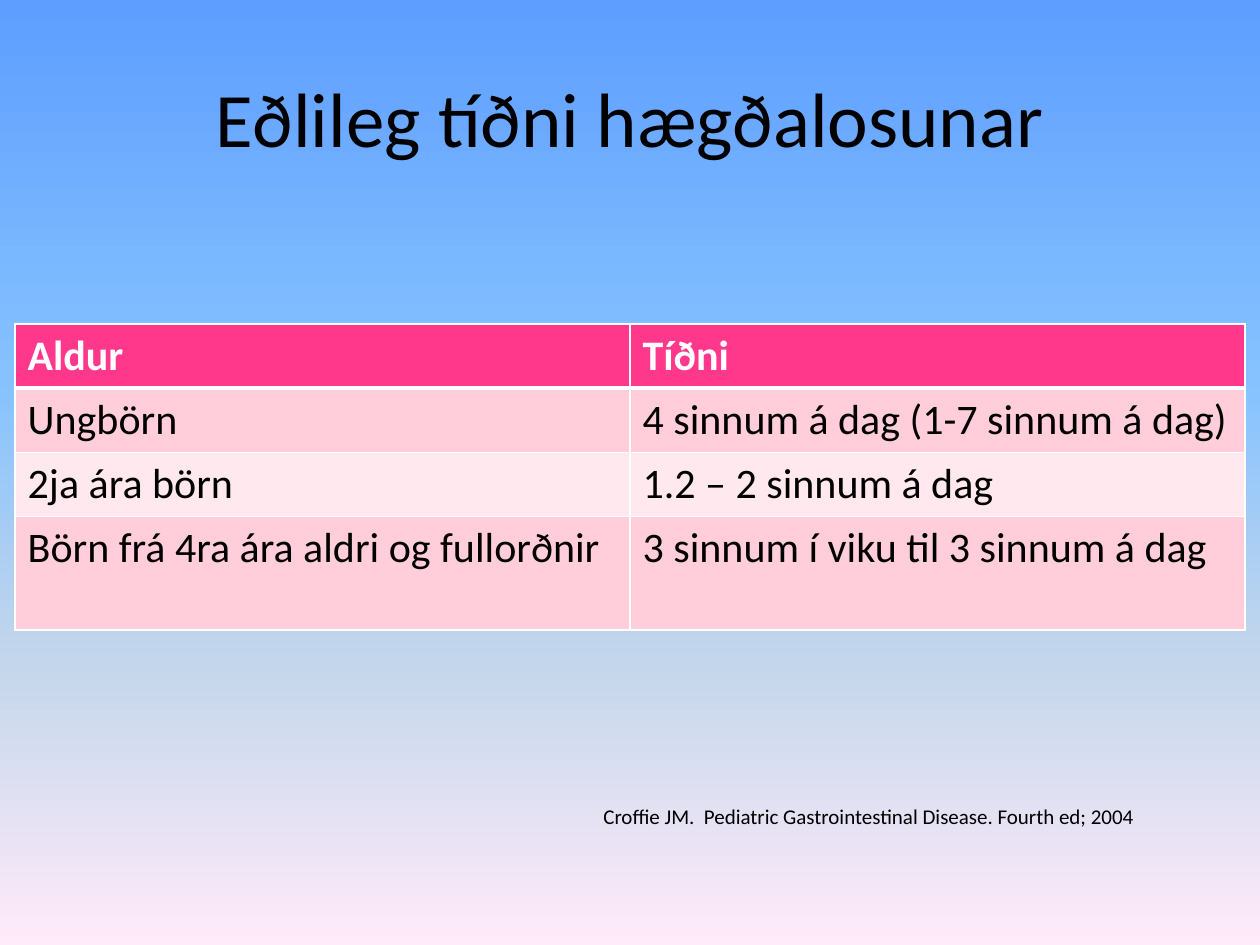
from lxml import etree
from pptx import Presentation
from pptx.dml.color import RGBColor
from pptx.enum.text import MSO_ANCHOR, MSO_AUTO_SIZE, PP_ALIGN
from pptx.oxml.ns import qn
from pptx.util import Inches, Pt

CENTER = PP_ALIGN.CENTER
MIDDLE = MSO_ANCHOR.MIDDLE
GROW = MSO_AUTO_SIZE.SHAPE_TO_FIT_TEXT

BLACK = RGBColor(0x00, 0x00, 0x00)
WHITE = RGBColor(0xFF, 0xFF, 0xFF)
PINK = RGBColor(0xFF, 0x38, 0x8C)
PINK_BAND = RGBColor(0xFF, 0xCE, 0xDA)
PALE_BAND = RGBColor(0xFF, 0xE8, 0xEE)
SKY_STOPS = [
    (0, RGBColor(0x5E, 0x9E, 0xFF)),
    (40, RGBColor(0x85, 0xC2, 0xFF)),
    (70, RGBColor(0xC4, 0xD6, 0xEB)),
    (100, RGBColor(0xFF, 0xEB, 0xFA)),
]


def set_font(paragraph, size, color, bold=False):
    paragraph.font.name = "Calibri"
    paragraph.font.size = Pt(size)
    paragraph.font.bold = bold
    paragraph.font.color.rgb = color


def add_solid(parent, color):
    solid = etree.SubElement(parent, qn("a:solidFill"))
    etree.SubElement(solid, qn("a:srgbClr"), val=str(color))


prs = Presentation()
prs.slide_width = Inches(10)
prs.slide_height = Inches(7.5)
slide = prs.slides.add_slide(prs.slide_layouts[6])

# Background gradient, top to bottom
sky = slide.background.fill
sky.gradient()
sky.gradient_angle = 270
stop_list = slide.element.find(".//" + qn("a:gsLst"))
for old_stop in list(stop_list):
    stop_list.remove(old_stop)
for percent, color in SKY_STOPS:
    stop = etree.SubElement(stop_list, qn("a:gs"), pos=str(percent * 1000))
    etree.SubElement(stop, qn("a:srgbClr"), val=str(color))

# Title
title = slide.shapes.add_textbox(Inches(0.5), Inches(0.3), Inches(9), Inches(1.25)).text_frame
title.word_wrap = True
title.vertical_anchor = MIDDLE
title.text = "Eðlileg tíðni hægðalosunar"
title.paragraphs[0].alignment = CENTER
set_font(title.paragraphs[0], 44, BLACK)

# Frequency by age
frequencies = [
    ("Aldur", "Tíðni"),
    ("Ungbörn", "4 sinnum á dag (1-7 sinnum á dag)"),
    ("2ja ára börn", "1.2 – 2 sinnum á dag"),
    ("Börn frá 4ra ára aldri og fullorðnir", "3 sinnum í viku til 3 sinnum á dag"),
]
row_heights = [0.51, 0.51, 0.51, 0.9]
row_fills = [PINK, PINK_BAND, PALE_BAND, PINK_BAND]
table = slide.shapes.add_table(
    len(frequencies), 2, Inches(0.12), Inches(2.57), Inches(9.76), Inches(sum(row_heights))
).table

for r, texts in enumerate(frequencies):
    table.rows[r].height = Inches(row_heights[r])
    is_header = r == 0
    for c, text in enumerate(texts):
        cell = table.cell(r, c)
        cell.text = text
        set_font(cell.text_frame.paragraphs[0], 24, WHITE if is_header else BLACK, is_header)
        # White borders, thicker below the header; they precede the fill
        widths = {"lnL": 1, "lnR": 1, "lnT": 3 if r == 1 else 1, "lnB": 3 if is_header else 1}
        properties = cell._tc.get_or_add_tcPr()
        for side, width in widths.items():
            border = etree.SubElement(properties, qn("a:" + side), w=str(Pt(width)))
            add_solid(border, WHITE)
        cell.fill.solid()
        cell.fill.fore_color.rgb = row_fills[r]

# Citation
citation = slide.shapes.add_textbox(Inches(4.69), Inches(6.33), Inches(4.61), Inches(0.3)).text_frame
citation.word_wrap = True
citation.auto_size = GROW
citation.text = "Croffie JM.  Pediatric Gastrointestinal Disease. Fourth ed; 2004"
set_font(citation.paragraphs[0], 12, BLACK)

prs.save("out.pptx")
